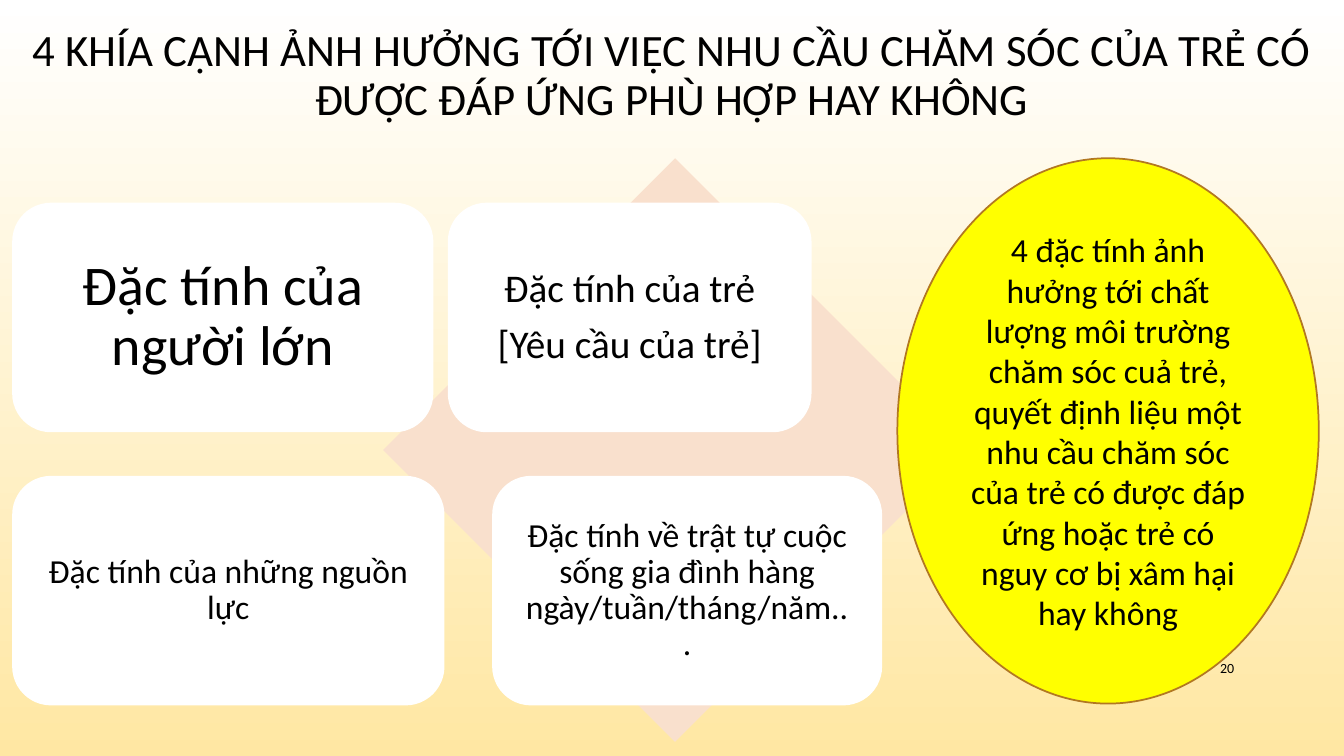
from dataclasses import dataclass

from pptx import Presentation
from pptx.dml.color import RGBColor
from pptx.enum.shapes import MSO_SHAPE as Shape
from pptx.enum.text import MSO_ANCHOR as Anchor, MSO_AUTO_SIZE as AutoSize, PP_ALIGN as Align
from pptx.util import Inches, Pt


@dataclass(frozen=True)
class Theme:
    font: str = "Calibri"
    text: str = "000000"
    paper: str = "FFFFFF"
    sand: str = "FFE7A3"
    peach: str = "F9E0CD"
    yellow: str = "FFFF00"
    brown: str = "B27822"
    title_size: int = 32
    body_size: int = 24
    number_size: int = 10
    tight: float = 0.9


THEME = Theme()
TOP_ROW, BOTTOM_ROW, CARD_HEIGHT = 2.02, 4.73, 2.26

# left, top, width, text margin, type size, paragraphs
CARDS = [
    (0.13, TOP_ROW, 4.16, 0.28, 40, ["Đặc tính của người lớn"]),
    (4.45, TOP_ROW, 3.59, 0.23, 28, ["Đặc tính của trẻ", "[Yêu cầu của trẻ]"]),
    (0.13, BOTTOM_ROW, 4.27, 0.21, 24, ["Đặc tính của những nguồn lực"]),
    (4.89, BOTTOM_ROW, 3.85, 0.21, 24,
     ["Đặc tính về trật tự cuộc sống gia đình hàng ngày/tuần/tháng/năm..."]),
]


def rgb(code):
    return RGBColor.from_string(code)


def write(frame, paragraphs, size, align=Align.CENTER, spacing=1.0, margin=None):
    frame.text = "\n".join(paragraphs)
    frame.word_wrap = True
    frame.auto_size = AutoSize.NONE
    frame.vertical_anchor = Anchor.MIDDLE
    if margin is not None:
        frame.margin_left = frame.margin_right = Inches(margin)
        frame.margin_top = frame.margin_bottom = Inches(margin)
    for paragraph in frame.paragraphs:
        paragraph.alignment = align
        paragraph.line_spacing = spacing
        for run in paragraph.runs:
            run.font.name = THEME.font
            run.font.size = Pt(size)
            run.font.color.rgb = rgb(THEME.text)
    # Gaps only between paragraphs
    for paragraph in frame.paragraphs[:-1]:
        paragraph.space_after = Pt(round(size * 0.35))


def add_figure(slide, kind, left, top, width, height, fill, line=None):
    figure = slide.shapes.add_shape(
        kind, Inches(left), Inches(top), Inches(width), Inches(height))
    figure.shadow.inherit = False
    figure.fill.solid()
    figure.fill.fore_color.rgb = rgb(fill)
    if line:
        figure.line.color.rgb = rgb(line)
        figure.line.width = Pt(1.25)
    else:
        figure.line.fill.background()
    return figure


def paint_background(slide):
    fill = slide.background.fill
    fill.gradient()
    fill.gradient_angle = 270
    for stop, position, color in zip(fill.gradient_stops, (0, 1), (THEME.paper, THEME.sand)):
        stop.position = position
        stop.color.rgb = rgb(color)


def add_title(slide, text):
    title = slide.shapes.title
    title.left, title.top = Inches(0), Inches(0.4)
    title.width, title.height = Inches(13.33), Inches(0.72)
    write(title.text_frame, [text], THEME.title_size, spacing=THEME.tight)


def add_card(slide, left, top, width, margin, size, paragraphs):
    card = add_figure(slide, Shape.ROUNDED_RECTANGLE, left, top, width, CARD_HEIGHT,
                      THEME.paper, THEME.paper)
    write(card.text_frame, paragraphs, size, spacing=THEME.tight, margin=margin)


def add_slide_number(slide, number):
    box = slide.shapes.add_textbox(Inches(11.5), Inches(6.43), Inches(0.84), Inches(0.4))
    write(box.text_frame, [number], THEME.number_size, align=Align.RIGHT)


def main():
    deck = Presentation()
    deck.slide_width, deck.slide_height = Inches(13.33), Inches(7.5)
    slide = deck.slides.add_slide(deck.slide_layouts.get_by_name("Title Only"))
    paint_background(slide)
    add_title(slide, "4 KHÍA CẠNH ẢNH HƯỞNG TỚI VIỆC NHU CẦU CHĂM SÓC CỦA TRẺ CÓ "
                     "ĐƯỢC ĐÁP ỨNG PHÙ HỢP HAY KHÔNG")

    # Four aspects on a diamond
    add_figure(slide, Shape.DIAMOND, 3.8, 1.57, 5.79, 5.79, THEME.peach)
    for card in CARDS:
        add_card(slide, *card)

    # Conclusion
    conclusion = add_figure(slide, Shape.OVAL, 8.9, 1.57, 4.18, 5.41, THEME.yellow, THEME.brown)
    write(conclusion.text_frame,
          ["4 đặc tính ảnh hưởng tới chất lượng môi trường chăm sóc cuả trẻ, "
           "quyết định liệu một nhu cầu chăm sóc của trẻ có được đáp ứng "
           "hoặc trẻ có nguy cơ bị xâm hại hay không"], THEME.body_size)

    add_slide_number(slide, "20")
    deck.save("out.pptx")


if __name__ == "__main__":
    main()
